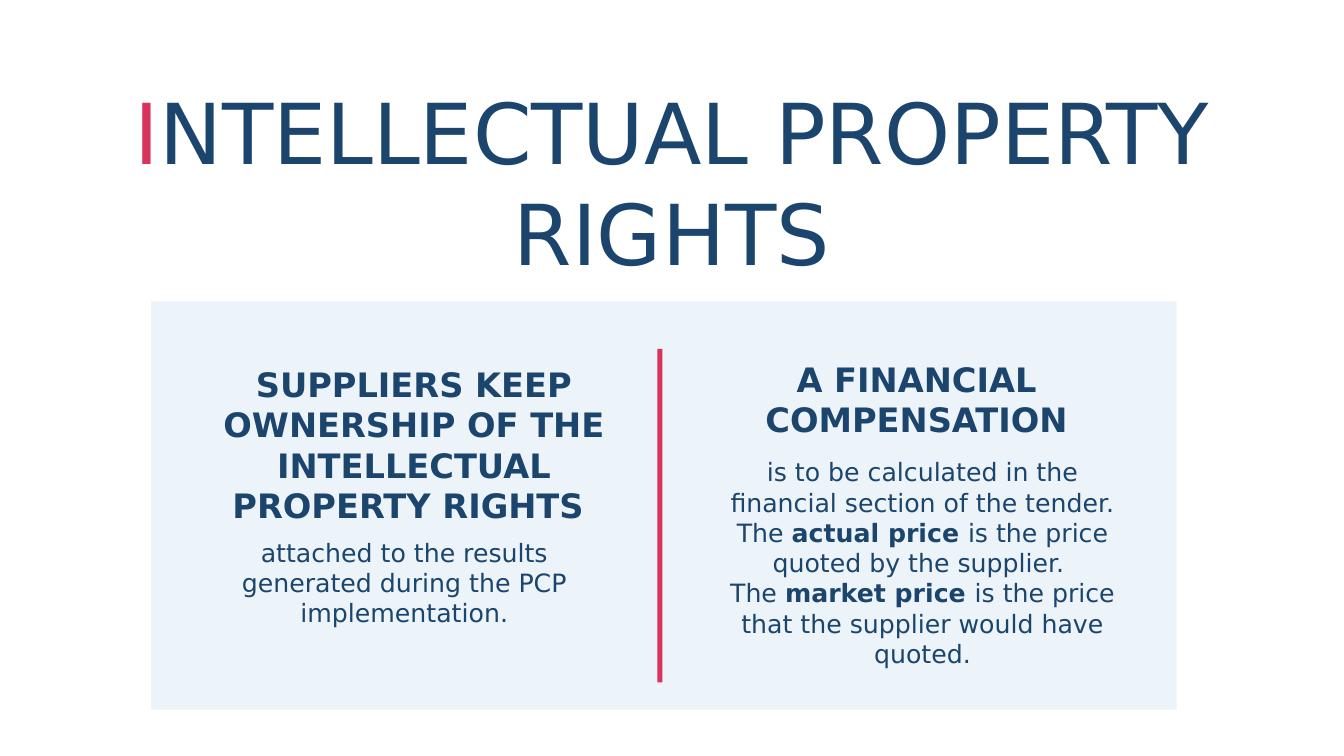
from lxml.etree import SubElement
from pptx import Presentation
from pptx.dml.color import RGBColor
from pptx.enum.shapes import MSO_SHAPE
from pptx.enum.text import MSO_ANCHOR, MSO_AUTO_SIZE, PP_ALIGN
from pptx.oxml.ns import qn
from pptx.util import Inches, Pt

NAVY = RGBColor(0x1B, 0x45, 0x6C)
CRIMSON = RGBColor(0xD9, 0x32, 0x5D)
PALE_BLUE = RGBColor(0xBD, 0xD7, 0xEB)
FONT = "DejaVu Sans"
LINE_PITCH = 1.2
FRAME_FORMAT = {
    "margin_left": 0, "margin_top": 0, "margin_right": 0, "margin_bottom": 0,
    "word_wrap": True, "auto_size": MSO_AUTO_SIZE.NONE,
    "vertical_anchor": MSO_ANCHOR.TOP,
}

OWNERSHIP = {
    "heading": "SUPPLIERS KEEP OWNERSHIP OF THE INTELLECTUAL PROPERTY RIGHTS ",
    "heading_box": (0.36, 0.62, 4.49, 1.62),
    "details": [[("attached to the results generated during the PCP implementation.", False)]],
    "details_box": (0.47, 2.34, 4.08, 0.91),
}
COMPENSATION = {
    "heading": "A FINANCIAL COMPENSATION",
    "heading_box": (5.63, 0.57, 3.92, 0.81),
    "details": [
        [("is to be calculated in the financial section of the tender. The ", False),
         ("actual price ", True),
         ("is the price quoted by the supplier. ", False)],
        [("The ", False), ("market price ", True),
         ("is the price that the supplier would have quoted.", False)],
    ],
    "details_box": (5.55, 1.54, 4.2, 2.12),
}


def apply(target, values):
    for name, value in values.items():
        setattr(target, name, value)


def format_paragraph(paragraph, size):
    apply(paragraph, {"alignment": PP_ALIGN.CENTER, "space_before": Pt(0),
                      "line_spacing": Pt(size * LINE_PITCH)})


def add_words(paragraph, words, size, color=NAVY, bold=False):
    run = paragraph.add_run()
    run.text = words
    apply(run.font, {"name": FONT, "size": Pt(size), "bold": bold})
    run.font.color.rgb = color


def add_rectangle(slide, left, top, width, height, color, opacity=100):
    rectangle = slide.shapes.add_shape(
        MSO_SHAPE.RECTANGLE, Inches(left), Inches(top), Inches(width), Inches(height))
    rectangle.shadow.inherit = False
    rectangle.line.fill.background()
    rectangle.fill.solid()
    rectangle.fill.fore_color.rgb = color
    if opacity < 100:
        tint = rectangle._element.spPr.find(qn("a:solidFill"))[0]
        SubElement(tint, qn("a:alpha"), val=str(opacity * 1000))


def add_text(shapes, left, top, width, height, lines, size):
    """Place one centred paragraph; lines are split by line breaks."""
    frame = shapes.add_textbox(
        Inches(left), Inches(top), Inches(width), Inches(height)).text_frame
    apply(frame, FRAME_FORMAT)
    paragraph = frame.paragraphs[0]
    format_paragraph(paragraph, size)
    for index, line in enumerate(lines):
        if index:
            paragraph.add_line_break()
        for words, bold in line:
            add_words(paragraph, words, size, bold=bold)


def add_title(slide, left, top, width, height):
    title = slide.shapes.title
    apply(title, {"left": Inches(left), "top": Inches(top),
                  "width": Inches(width), "height": Inches(height)})
    frame = title.text_frame
    apply(frame, FRAME_FORMAT)
    first_line, second_line = frame.paragraphs[0], frame.add_paragraph()
    for paragraph in (first_line, second_line):
        format_paragraph(paragraph, 60)
    add_words(first_line, "I", 60, CRIMSON)
    add_words(first_line, "NTELLECTUAL PROPERTY", 60)
    add_words(second_line, "RIGHTS", 60)


def add_column(shapes, left, top, column):
    """Place a heading and its details relative to the panel corner."""
    parts = (
        (column["heading_box"], [[(column["heading"], True)]], 24),
        (column["details_box"], column["details"], 18),
    )
    for (x, y, width, height), lines, size in parts:
        add_text(shapes, left + x, top + y, width, height, lines, size)


def add_panel(slide, left, top, width, height):
    # Tinted background and divider
    add_rectangle(slide, left, top, width, height, PALE_BLUE, opacity=28)
    add_rectangle(slide, left + 5.02, top + 0.47, 0.05, 3.31, CRIMSON)
    # Ownership on the left, compensation on the right
    add_column(slide.shapes.add_group_shape().shapes, left, top, OWNERSHIP)
    add_column(slide.shapes, left, top, COMPENSATION)


def main():
    deck = Presentation()
    apply(deck, {"slide_width": Inches(13.33), "slide_height": Inches(7.5)})
    slide = deck.slides.add_slide(deck.slide_layouts[5])
    add_title(slide, 0, 0.8, 13.33, 2.02)
    add_panel(slide, 1.5, 2.99, 10.17, 4.05)
    deck.save("out.pptx")


if __name__ == "__main__":
    main()
